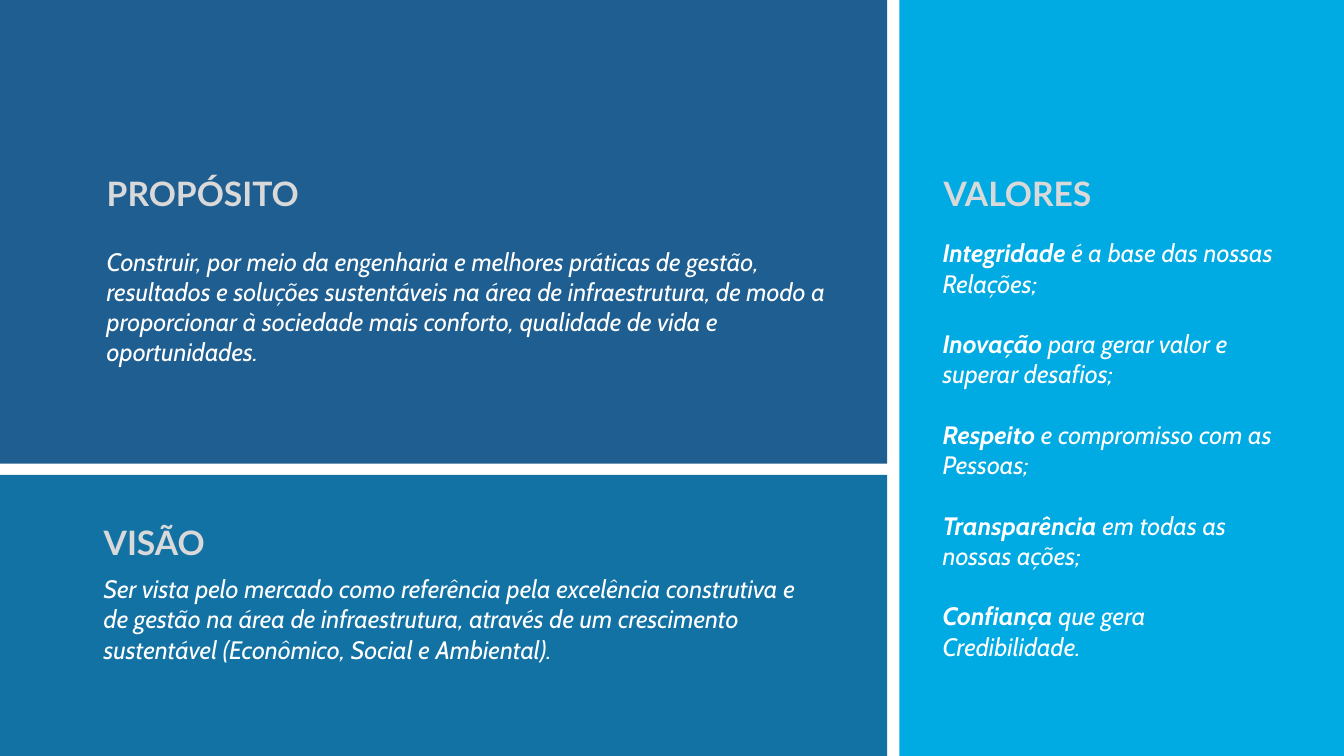
from typing import NamedTuple

from pptx import Presentation
from pptx.dml.color import RGBColor
from pptx.enum.shapes import MSO_SHAPE as Shape
from pptx.enum.text import MSO_AUTO_SIZE as AutoSize
from pptx.slide import Slide
from pptx.text.text import TextFrame
from pptx.util import Inches, Pt

COLORS = {
    "purpose": "1F5E90",
    "vision": "1372A4",
    "values": "00AAE3",
    "heading": "D9D9D9",
    "body": "FFFFFF",
}
VALUE_GAP = Pt(21.6)  # one line of body text


class Area(NamedTuple):
    left: float
    top: float
    width: float
    height: float


class Statement(NamedTuple):
    heading: str
    color: str
    panel: Area
    heading_area: Area
    body_area: Area
    body: list[tuple[str, str]]  # bold lead and the rest of each paragraph


STATEMENTS = [
    Statement(
        "PROPÓSITO", "purpose",
        Area(0, 0, 8.8, 4.6), Area(0.96, 1.67, 3.12, 0.5), Area(0.96, 2.39, 7.52, 1.31),
        [("", "Construir, por meio da engenharia e melhores práticas de gestão, "
              "resultados e soluções sustentáveis na área de infraestrutura, de modo a "
              "proporcionar à sociedade mais conforto, qualidade de vida e oportunidades.")],
    ),
    Statement(
        "VISÃO", "vision",
        Area(0, 4.71, 8.8, 2.79), Area(0.93, 5.13, 1.71, 0.5), Area(0.93, 5.64, 7.26, 1.01),
        [("", "Ser vista pelo mercado como referência pela excelência construtiva e "
              "de gestão na área de infraestrutura, através de um crescimento "
              "sustentável (Econômico, Social e Ambiental).")],
    ),
    Statement(
        "VALORES", "values",
        Area(8.92, 0, 4.42, 7.5), Area(9.26, 1.67, 2.12, 0.5), Area(9.25, 2.31, 3.5, 4.34),
        [
            ("Integridade", " é a base das nossas Relações;"),
            ("Inovação", " para gerar valor e superar desafios;"),
            ("Respeito", " e compromisso com as Pessoas;"),
            ("Transparência", " em todas as nossas ações;"),
            ("Confiança", " que gera Credibilidade."),
        ],
    ),
]


def color(name: str) -> RGBColor:
    return RGBColor.from_string(COLORS[name])


def add_panel(page: Slide, area: Area, fill: str) -> None:
    panel = page.shapes.add_shape(Shape.RECTANGLE, *map(Inches, area))
    panel.shadow.inherit = False
    panel.fill.solid()
    panel.fill.fore_color.rgb = color(fill)
    panel.line.fill.background()


def add_text_frame(page: Slide, area: Area) -> TextFrame:
    frame = page.shapes.add_textbox(*map(Inches, area)).text_frame
    frame.word_wrap = True
    frame.auto_size = AutoSize.SHAPE_TO_FIT_TEXT
    return frame


def add_heading(page: Slide, area: Area, text: str) -> None:
    para = add_text_frame(page, area).paragraphs[0]
    para.text = text
    para.font.name = "Lato"
    para.font.size = Pt(24)
    para.font.bold = True
    para.font.color.rgb = color("heading")


def add_body(page: Slide, area: Area, body: list[tuple[str, str]]) -> None:
    frame = add_text_frame(page, area)
    for index, (lead, rest) in enumerate(body):
        para = frame.add_paragraph() if index else frame.paragraphs[0]
        if index:
            para.space_before = VALUE_GAP
        para.font.name = "Cabin"
        para.font.size = Pt(18)
        para.font.italic = True
        para.font.color.rgb = color("body")
        if lead:
            span = para.add_run()
            span.text = lead
            span.font.bold = True
        para.add_run().text = rest


def main() -> None:
    deck = Presentation()
    deck.slide_width, deck.slide_height = Inches(13.33), Inches(7.5)
    page = deck.slides.add_slide(deck.slide_layouts[6])

    # Coloured panels, each with its heading and text
    for statement in STATEMENTS:
        add_panel(page, statement.panel, statement.color)
        add_heading(page, statement.heading_area, statement.heading)
        add_body(page, statement.body_area, statement.body)

    deck.save("out.pptx")


if __name__ == "__main__":
    main()
